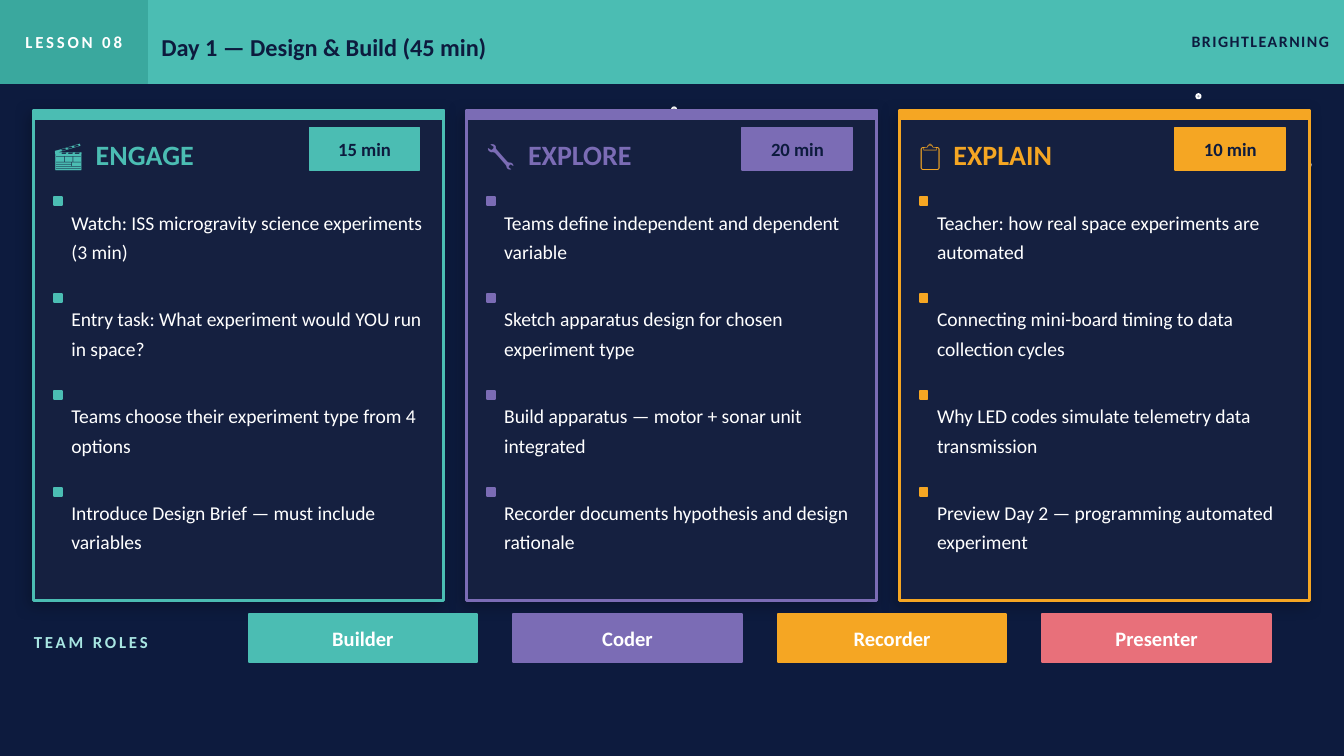
"""Build the Day 1 lesson slide: three timed phases and the team roles."""
import pptx
import pptx.dml.color
import pptx.enum.shapes
import pptx.enum.text
import pptx.oxml.ns
import pptx.util
from lxml import etree

Cm = pptx.util.Cm
Pt = pptx.util.Pt
qn = pptx.oxml.ns.qn
color = pptx.dml.color.RGBColor.from_string
SHAPE = pptx.enum.shapes.MSO_SHAPE
ALIGN = pptx.enum.text.PP_ALIGN

NAVY, WHITE, CARD = "0D1B3E", "FFFFFF", "152040"
TEAL, PURPLE, ORANGE, CORAL = "4BBDB3", "7B6CB5", "F5A623", "E8707A"

deck = pptx.Presentation()
deck.slide_width, deck.slide_height = Cm(25.4), Cm(14.29)
slide = deck.slides.add_slide(deck.slide_layouts[6])
slide.background.fill.solid()
slide.background.fill.fore_color.rgb = color(NAVY)


def add_block(left, top, width, height, fill, line=None, weight=1, kind=SHAPE.RECTANGLE):
    block = slide.shapes.add_shape(kind, Cm(left), Cm(top), Cm(width), Cm(height))
    block.shadow.inherit = False
    block.fill.solid()
    block.fill.fore_color.rgb = color(fill)
    block.line.color.rgb = color(line or fill)
    block.line.width = Pt(weight)
    return block


def add_text(text, box, size, ink, bold=True, align=ALIGN.LEFT, track=0,
             inset_top=0, inset_right=0, leading=None, tab=None):
    if isinstance(box, tuple):
        box = slide.shapes.add_textbox(*map(Cm, box))
    frame = box.text_frame
    frame.word_wrap = True
    frame.vertical_anchor = pptx.enum.text.MSO_ANCHOR.MIDDLE
    frame.margin_left = frame.margin_bottom = 0
    frame.margin_top, frame.margin_right = Cm(inset_top), Cm(inset_right)
    paragraph = frame.paragraphs[0]
    paragraph.alignment = align
    if leading:
        paragraph.line_spacing = leading
    if tab:
        tabs = etree.SubElement(paragraph._p.get_or_add_pPr(), qn("a:tabLst"))
        etree.SubElement(tabs, qn("a:tab"), pos=str(Cm(tab)), algn="l")
    run = paragraph.add_run()
    run.text = text
    run.font.name, run.font.size, run.font.bold = "Calibri", Pt(size), bold
    run.font.color.rgb = color(ink)
    if track:
        run.font._element.set("spc", str(int(track * 100)))


for left, top, size, opacity in [(12.7, 2.03, 0.08, 65), (22.61, 1.78, 0.08, 60),
                                 (24.64, 3.05, 0.13, 50)]:
    star = add_block(left, top, size, size, WHITE, kind=SHAPE.OVAL)
    star_color = star.fill._xPr.find(qn("a:solidFill"))[0]
    etree.SubElement(star_color, qn("a:alpha"), val=str(opacity * 1000))

header_height = 1.57
add_block(0, 0, 25.4, header_height, TEAL)
lesson_tag = add_block(0, 0, 2.79, header_height, "3AA89E")
add_text("LESSON 08", lesson_tag, 9, WHITE, align=ALIGN.CENTER, track=1.5)
add_text("Day 1 — Design & Build (45 min)", (3.05, 0, 19.05, header_height), 13, NAVY,
         inset_top=0.2)
add_text("BRIGHTLEARNING", (19.56, 0, 5.84, header_height), 8.5, NAVY,
         align=ALIGN.RIGHT, track=0.8, inset_right=0.28)

phases = [
    ("🎬", "ENGAGE", 0.79, "15 min", TEAL, [
        "Watch: ISS microgravity science experiments (3 min)",
        "Entry task: What experiment would YOU run in space?",
        "Teams choose their experiment type from 4 options",
        "Introduce Design Brief — must include variables"]),
    ("🔧", "EXPLORE", 0.78, "20 min", PURPLE, [
        "Teams define independent and dependent variable",
        "Sketch apparatus design for chosen experiment type",
        "Build apparatus — motor + sonar unit integrated",
        "Recorder documents hypothesis and design rationale"]),
    ("📋", "EXPLAIN", 0.64, "10 min", ORANGE, [
        "Teacher: how real space experiments are automated",
        "Connecting mini-board timing to data collection cycles",
        "Why LED codes simulate telemetry data transmission",
        "Preview Day 2 — programming automated experiment"]),
]
margin, card_top, card_width = 0.64, 2.08, 7.75
for column, (icon, phase, title_indent, duration, accent, steps) in enumerate(phases):
    left = margin + column * 8.18
    card = add_block(left, card_top, card_width, 9.27, CARD, accent, 1.5)
    effects = card._element.spPr.find(qn("a:effectLst"))
    shadow = etree.SubElement(effects, qn("a:outerShdw"), blurRad=str(Pt(8)),
                              dist=str(Pt(3)), dir=str(135 * 60000),
                              algn="bl", rotWithShape="0")
    shadow_color = etree.SubElement(shadow, qn("a:srgbClr"), val="000000")
    etree.SubElement(shadow_color, qn("a:alpha"), val="25000")
    add_block(left, card_top, card_width, 0.18, accent)
    add_text(f"{icon}\t{phase}", (left + 0.38, 2.39, 5.84, 1.07), 15, accent,
             tab=title_indent)
    badge = add_block(left + 5.21, 2.41, 2.08, 0.81, accent)
    add_text(duration, badge, 10, NAVY, align=ALIGN.CENTER)
    for row, step in enumerate(steps):
        step_top = 3.56 + row * 1.83
        add_block(left + 0.38, step_top + 0.17, 0.15, 0.15, accent)
        add_text(step, (left + 0.71, step_top, 6.68, 1.73), 10.5, WHITE,
                 bold=False, leading=1.25)

add_text("TEAM ROLES", (margin, 11.68, 3.81, 0.89), 9, "A8E6E2", track=1.5)
roles = [("Builder", TEAL), ("Coder", PURPLE), ("Recorder", ORANGE), ("Presenter", CORAL)]
for column, (role, accent) in enumerate(roles):
    role_tag = add_block(4.7 + column * 5, 11.61, 4.32, 0.91, accent)
    add_text(role, role_tag, 11, WHITE, align=ALIGN.CENTER)

deck.save("out.pptx")
